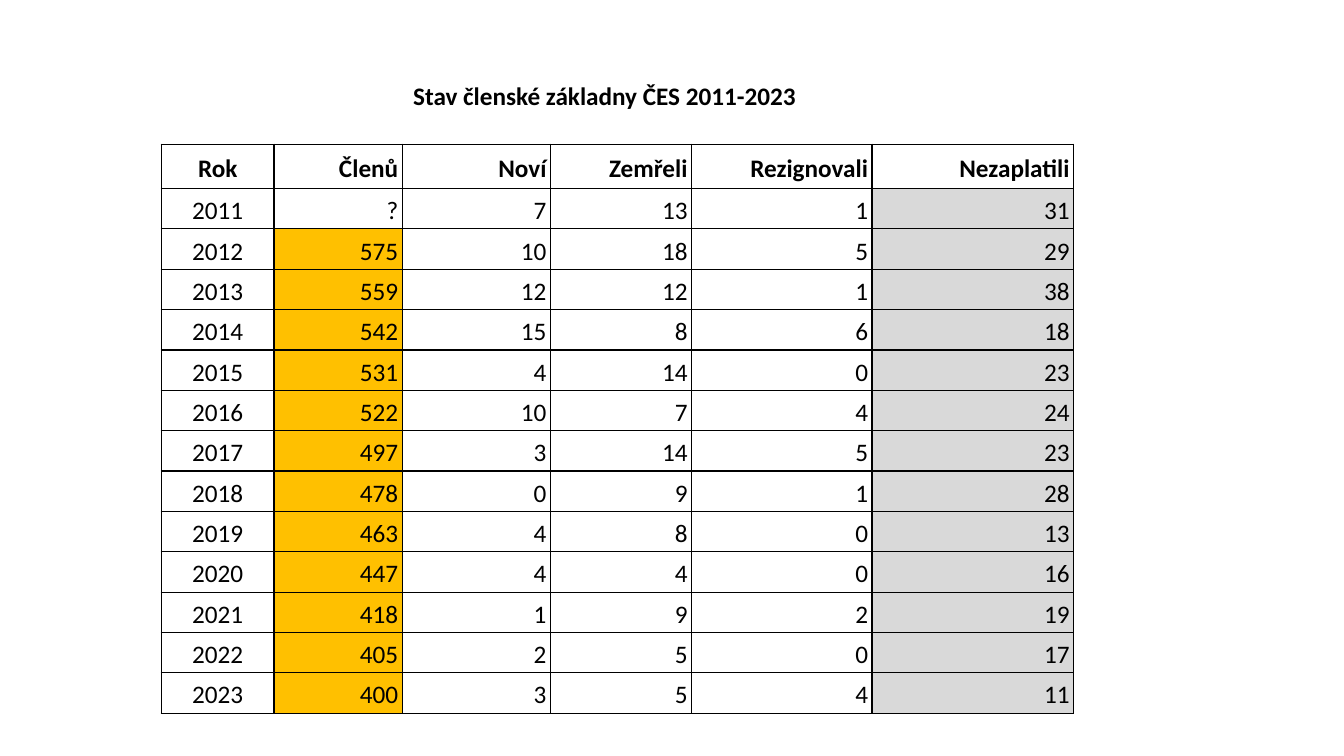
from pptx import Presentation
from pptx.dml.color import RGBColor
from pptx.enum.text import MSO_ANCHOR, MSO_AUTO_SIZE, PP_ALIGN
from pptx.oxml import parse_xml
from pptx.oxml.ns import nsdecls
from pptx.util import Inches, Pt

SLIDE_WIDTH, SLIDE_HEIGHT = Inches(13.33), Inches(7.5)
COLORS = {"ink": "000000", "members": "FFC000", "unpaid": "D9D9D9"}

TITLE = "Stav členské základny ČES 2011-2023"
HEADERS = ["Rok", "Členů", "Noví", "Zemřeli", "Rezignovali", "Nezaplatili"]
FIRST_YEAR = 2011
YEARLY_COUNTS = [
    ("?", 7, 13, 1, 31),
    (575, 10, 18, 5, 29),
    (559, 12, 12, 1, 38),
    (542, 15, 8, 6, 18),
    (531, 4, 14, 0, 23),
    (522, 10, 7, 4, 24),
    (497, 3, 14, 5, 23),
    (478, 0, 9, 1, 28),
    (463, 4, 8, 0, 13),
    (447, 4, 4, 0, 16),
    (418, 1, 9, 2, 19),
    (405, 2, 5, 0, 17),
    (400, 3, 5, 4, 11),
]
# Shares of the slide in percent; the last column stays empty and open
COLUMN_SHARES = [8.4, 9.53, 11.03, 10.5, 13.43, 15, 6.75]
HEADER_SHARE, ROW_SHARE = 5.87, 5.34
YEAR_COLUMN, MEMBERS_COLUMN, UNPAID_COLUMN = 0, 1, 5
NO_STYLE_ID = "{2D5ABB26-0587-4C30-8999-92F81FD0307C}"


def across(percent):
    return round(SLIDE_WIDTH * percent / 100)


def down(percent):
    return round(SLIDE_HEIGHT * percent / 100)


def set_all(target, values):
    for name, value in values.items():
        setattr(target, name, value)


def write(para, text, bold=False):
    span = para.add_run()
    span.text = text
    set_all(span.font, {"name": "Calibri", "size": Pt(18), "bold": bold})
    span.font.color.rgb = RGBColor.from_string(COLORS["ink"])


def add_border(cell, widths):
    """Draw the given sides (L, R, T, B in this order), widths in points."""
    properties = cell._tc.get_or_add_tcPr()
    for index, (side, width) in enumerate(widths.items()):
        properties.insert(index, parse_xml(
            f'<a:ln{side} {nsdecls("a")} w="{Pt(width)}">'
            f'<a:solidFill><a:srgbClr val="{COLORS["ink"]}"/></a:solidFill>'
            f'</a:ln{side}>'))


def fill_name(row, column):
    if column == UNPAID_COLUMN and row > 0:
        return "unpaid"
    if column == MEMBERS_COLUMN and row > 1:
        return "members"
    return None


def format_cell(cell, row, column, text):
    set_all(cell, {"margin_left": Inches(0.04), "margin_right": Inches(0.04),
                   "margin_top": 0, "margin_bottom": 0,
                   "vertical_anchor": MSO_ANCHOR.MIDDLE})
    para = cell.text_frame.paragraphs[0]
    set_all(para, {"line_spacing": 1.15, "alignment":
                   PP_ALIGN.CENTER if column == YEAR_COLUMN else PP_ALIGN.RIGHT})
    write(para, text, bold=row == 0)
    name = fill_name(row, column)
    if name:
        cell.fill.solid()
        cell.fill.fore_color.rgb = RGBColor.from_string(COLORS[name])
    else:
        cell.fill.background()
    add_border(cell, {"L": 1.5 if column == MEMBERS_COLUMN else 1,
                      "R": 1.5 if column == YEAR_COLUMN else 1,
                      "T": 1, "B": 1})


def add_member_table(page):
    records = [HEADERS] + [(FIRST_YEAR + index, *counts)
                           for index, counts in enumerate(YEARLY_COUNTS)]
    row_shares = [HEADER_SHARE] + [ROW_SHARE] * len(YEARLY_COUNTS)
    frame = page.shapes.add_table(
        len(records), len(COLUMN_SHARES), across(12), down(19.07),
        across(sum(COLUMN_SHARES)), down(sum(row_shares)))
    table = frame.table
    set_all(table, {"first_row": False, "horz_banding": False})
    table._tbl.tblPr.find("{*}tableStyleId").text = NO_STYLE_ID
    for column, share in zip(table.columns, COLUMN_SHARES):
        column.width = across(share)
    for row, (record, share) in enumerate(zip(records, row_shares)):
        table.rows[row].height = down(share)
        for column, value in enumerate(record):
            format_cell(table.cell(row, column), row, column, str(value))
        open_cell = table.cell(row, len(record))
        set_all(open_cell, {"margin_top": 0, "margin_bottom": 0})
        open_cell.fill.background()
        add_border(open_cell, {"L": 1})


def add_title(page):
    box = page.shapes.add_textbox(across(30), down(10), across(30.23), down(5.33))
    set_all(box.text_frame, {"word_wrap": False,
                             "auto_size": MSO_AUTO_SIZE.SHAPE_TO_FIT_TEXT})
    write(box.text_frame.paragraphs[0], TITLE, bold=True)


def main():
    deck = Presentation()
    set_all(deck, {"slide_width": SLIDE_WIDTH, "slide_height": SLIDE_HEIGHT})
    page = deck.slides.add_slide(deck.slide_layouts[6])
    add_member_table(page)
    add_title(page)
    deck.save("out.pptx")


if __name__ == "__main__":
    main()
